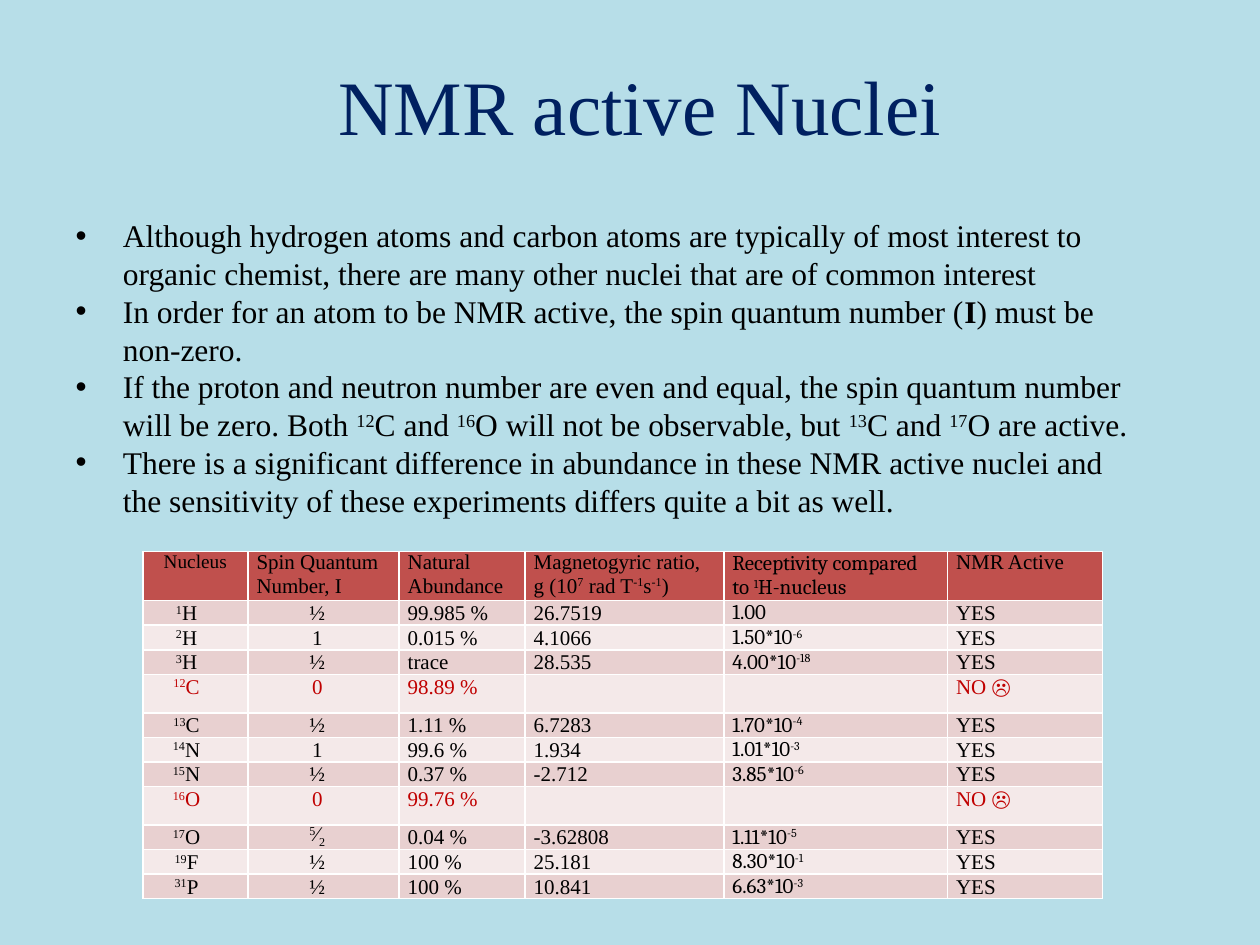
from pptx import Presentation
from pptx.dml.color import RGBColor
from pptx.enum.text import MSO_ANCHOR, MSO_AUTO_SIZE, PP_ALIGN
from pptx.util import Pt

SERIF = "Times New Roman"
BASELINES = {"^": "30000", "_": "-25000"}

BULLETS = [
    "Although hydrogen atoms and carbon atoms are typically of most interest to \n"
    "organic chemist, there are many other nuclei that are of common interest",
    "In order for an atom to be NMR active, the spin quantum number (|*I|) must be \nnon-zero.",
    "If the proton and neutron number are even and equal, the spin quantum number \n"
    "will be zero. Both |^12|C and |^16|O will not be observable, but "
    "|^13|C and |^17|O are active.",
    "There is a significant difference in abundance in these NMR active nuclei and \n"
    "the sensitivity of these experiments differs quite a bit as well.",
]

HEADERS = [
    "Nucleus", "Spin Quantum Number, I", "Natural Abundance",
    "Magnetogyric ratio, \ng (10|^7| rad T|^-1|s|^-1|)",
    "Receptivity compared to |^1|H-nucleus", "NMR Active",
]
NUCLEI = [
    ["^1|H", "½", "99.985 %", "26.7519", "1.00", "YES"],
    ["^2|H", "1", "0.015 %", "4.1066", "1.50*10|^-6", "YES"],
    ["^3|H", "½", "trace", "28.535", "4.00*10|^-18", "YES"],
    ["^12|C", "0", "98.89 %", "", "", "NO ☹"],
    ["^13|C", "½", "1.11 %", "6.7283", "1.70*10|^-4", "YES"],
    ["^14|N", "1", "99.6 %", "1.934", "1.01*10|^-3", "YES"],
    ["^15|N", "½", "0.37 %", "-2.712", "3.85*10|^-6", "YES"],
    ["^16|O", "0", "99.76 %", "", "", "NO ☹"],
    ["^17|O", "^5|∕|_2", "0.04 %", "-3.62808", "1.11*10|^-5", "YES"],
    ["^19|F", "½", "100 %", "25.181", "8.30*10|^-1", "YES"],
    ["^31|P", "½", "100 %", "10.841", "6.63*10|^-3", "YES"],
]
COLUMN_WIDTHS = [60, 86.4, 72, 113.6, 127.8, 88.6]
HEADER_HEIGHT, ROW_HEIGHT = 28.25, 14.05
RIGHT_MARGINS = {0: 15, 1: 12}


def colour(hex_string):
    return RGBColor.from_string(hex_string)


def apply(target, values):
    for name, value in values.items():
        setattr(target, name, value)


def place(shape, box):
    apply(shape, dict(zip(("left", "top", "width", "height"), map(Pt, box))))


def add_spans(para, text, size, hex_string, font=SERIF):
    for piece in filter(None, text.split("|")):
        mark = piece[0] if piece[0] in "^_*" else ""
        for number, line in enumerate(piece[len(mark):].split("\n")):
            if number:
                para.add_line_break()
            span = para.add_run()
            span.text = line
            apply(span.font, {"name": font, "size": Pt(size), "bold": mark == "*"})
            span.font.color.rgb = colour(hex_string)
            if mark in BASELINES:
                span._r.get_or_add_rPr().set("baseline", BASELINES[mark])


def add_title(page, box):
    title = page.shapes.title
    place(title, box)
    apply(title.text_frame, {"vertical_anchor": MSO_ANCHOR.MIDDLE,
                             "auto_size": MSO_AUTO_SIZE.NONE})
    para = title.text_frame.paragraphs[0]
    para.alignment = PP_ALIGN.CENTER
    add_spans(para, "NMR active Nuclei", 44, "002060")


def add_bullets(page, box):
    body = page.placeholders[1]
    place(body, box)
    frame = body.text_frame
    frame.auto_size = MSO_AUTO_SIZE.NONE
    for number, text in enumerate(BULLETS):
        para = frame.add_paragraph() if number else frame.paragraphs[0]
        apply(para, {"space_before": Pt(0), "line_spacing": Pt(21.6)})
        add_spans(para, text, 18, "000000")


def fill_cell(cell, text, row, column):
    header = row == 0
    fill = "C0504D" if header else ("F4E9E9", "E8D0D0")[row % 2]
    cell.fill.solid()
    cell.fill.fore_color.rgb = colour(fill)
    right = 5 if header else RIGHT_MARGINS.get(column, 5)
    apply(cell, {"margin_left": Pt(5), "margin_right": Pt(right),
                 "margin_top": 0, "margin_bottom": 0})
    para = cell.text_frame.paragraphs[0]
    if not header:
        para.line_spacing = Pt(14)
    if column == 0 or (column == 1 and not header):
        para.alignment = PP_ALIGN.CENTER
    inactive = not header and NUCLEI[row - 1][-1].startswith("NO")
    add_spans(para, text, 11 if header and column == 0 else 12,
              "C00000" if inactive else "000000",
              "Cambria" if column == 4 else SERIF)


def add_nuclei_table(page, left, top):
    records = [HEADERS, *NUCLEI]
    height = HEADER_HEIGHT + ROW_HEIGHT * len(NUCLEI)
    box = (left, top, sum(COLUMN_WIDTHS), height)
    table = page.shapes.add_table(len(records), len(HEADERS), *map(Pt, box)).table
    for column, width in zip(table.columns, COLUMN_WIDTHS):
        column.width = Pt(width)
    for row, record in enumerate(records):
        table.rows[row].height = Pt(ROW_HEIGHT if row else HEADER_HEIGHT)
        for column, text in enumerate(record):
            fill_cell(table.cell(row, column), text, row, column)


def main():
    deck = Presentation()
    apply(deck, {"slide_width": Pt(720), "slide_height": Pt(540)})
    page = deck.slides.add_slide(deck.slide_layouts[1])
    page.background.fill.solid()
    page.background.fill.fore_color.rgb = colour("B7DEE8")
    add_title(page, (41.8, 12, 648, 96))
    add_bullets(page, (36, 120, 648, 210))
    add_nuclei_table(page, 81.6, 315)
    deck.save("out.pptx")


if __name__ == "__main__":
    main()
